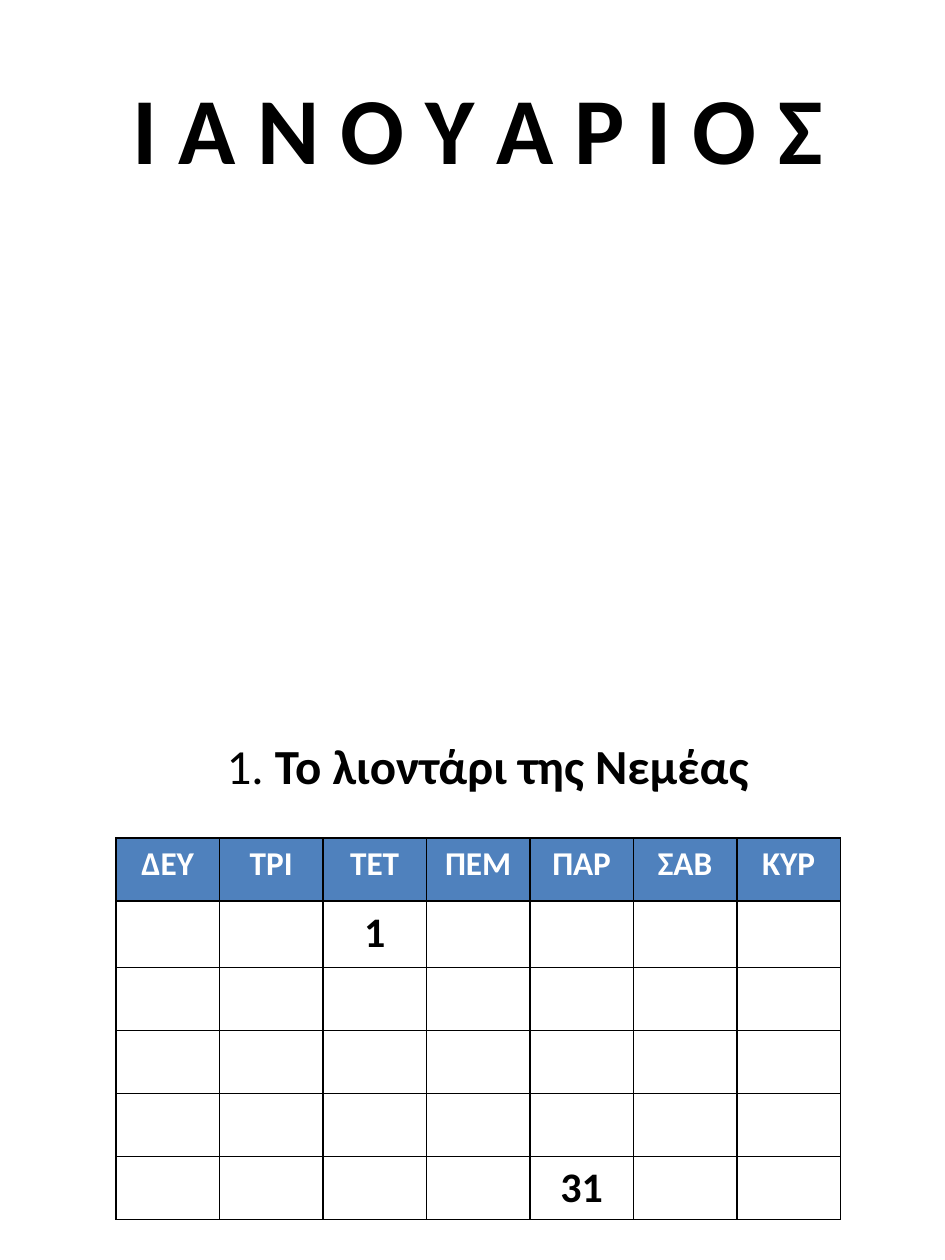
"""Build a January calendar page with a title, a caption and a month table."""
from lxml import etree
from pptx import Presentation
from pptx.dml.color import RGBColor
from pptx.enum.text import PP_ALIGN
from pptx.oxml.ns import qn
from pptx.util import Inches, Pt

CENTER = PP_ALIGN.CENTER
BLACK, WHITE, BLUE = "000000", "FFFFFF", "4F81BD"
DAYS = ["ΔΕΥ", "ΤΡΙ", "ΤΕΤ", "ΠΕΜ", "ΠΑΡ", "ΣΑΒ", "ΚΥΡ"]
DATES = {(1, 2): "1", (5, 4): "31"}
ROW_HEIGHTS = [0.5, 0.53, 0.5, 0.5, 0.5, 0.5]
BORDERS = ["a:lnL", "a:lnR", "a:lnT", "a:lnB"]


def rgb(value):
    return RGBColor.from_string(value)


def style(para, size, color, bold=True):
    para.alignment = CENTER
    for span in para.runs:
        span.font.name = "Calibri"
        span.font.size = Pt(size)
        span.font.bold = bold
        span.font.color.rgb = rgb(color)


deck = Presentation()
deck.slide_width = Inches(7.5)
deck.slide_height = Inches(10)
page = deck.slides.add_slide(deck.slide_layouts[6])

title = page.shapes.add_textbox(Inches(0.6), Inches(0.51), Inches(6.38), Inches(1.01))
title.text_frame.word_wrap = True
title.text_frame.text = "Ι Α Ν Ο Υ Α Ρ Ι Ο Σ"
style(title.text_frame.paragraphs[0], 54, BLACK)

caption = page.shapes.add_textbox(Inches(0.76), Inches(5.79), Inches(6.22), Inches(0.57))
caption.text_frame.word_wrap = True
caption.text_frame.text = "1. "
para = caption.text_frame.paragraphs[0]
para.add_run().text = "Το λιοντάρι της Νεµέας"
style(para, 28, BLACK)
para.runs[0].font.bold = False

calendar = page.shapes.add_table(
    len(ROW_HEIGHTS), len(DAYS), Inches(0.92), Inches(6.65), Inches(5.75), Inches(3.03)
).table
calendar.horz_banding = False
for column in calendar.columns:
    column.width = Inches(5.75 / len(DAYS))

for row, height in enumerate(ROW_HEIGHTS):
    calendar.rows[row].height = Inches(height)
    for column, day in enumerate(DAYS):
        cell = calendar.cell(row, column)
        properties = cell._tc.get_or_add_tcPr()
        for border in BORDERS:
            line = etree.SubElement(properties, qn(border), w=str(Pt(1)))
            fill = etree.SubElement(line, qn("a:solidFill"))
            etree.SubElement(fill, qn("a:srgbClr"), val=BLACK)
        cell.fill.solid()
        cell.fill.fore_color.rgb = rgb(WHITE if row else BLUE)
        text = DATES.get((row, column), "") if row else day
        if text:
            cell.text_frame.text = text
            style(cell.text_frame.paragraphs[0], 24 if row else 19, BLACK if row else WHITE)

deck.save("out.pptx")
